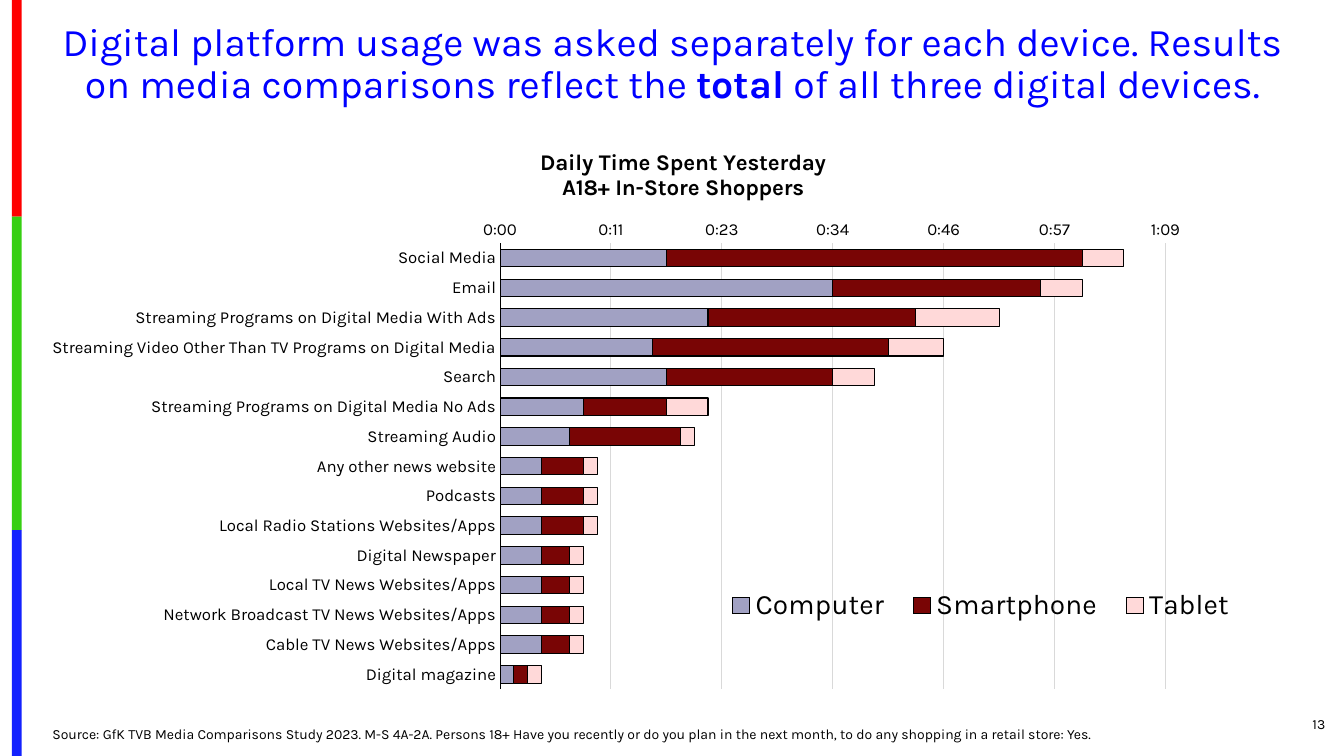
"""Build the slide on daily time spent per digital device."""
from dataclasses import dataclass
from typing import Any

from lxml.etree import SubElement
from pptx import Presentation
from pptx.chart.data import CategoryChartData
from pptx.dml.color import RGBColor
from pptx.enum.chart import XL_CHART_TYPE as ChartType
from pptx.enum.chart import XL_LEGEND_POSITION as LegendPos
from pptx.enum.chart import XL_TICK_MARK as Tick
from pptx.enum.shapes import MSO_SHAPE as Shape
from pptx.enum.text import MSO_ANCHOR as Anchor
from pptx.enum.text import PP_ALIGN as Align
from pptx.oxml.ns import qn
from pptx.util import Cm, Pt

FONT = "Karla"
BLACK = RGBColor(0x00, 0x00, 0x00)
TITLE_BLUE = RGBColor(0x00, 0x00, 0xFF)
RED = RGBColor(0xFE, 0x00, 0x00)
GREEN = RGBColor(0x36, 0xCF, 0x12)
BLUE = RGBColor(0x13, 0x22, 0xFE)
GRID_GREY = RGBColor(0xD9, 0xD9, 0xD9)
LAVENDER = RGBColor(0xA1, 0xA1, 0xC3)
MAROON = RGBColor(0x79, 0x05, 0x05)
PINK = RGBColor(0xFF, 0xD9, 0xD9)
DAY_PARTS = 1000


@dataclass
class Stripe:
    height: float
    color: RGBColor


@dataclass
class Device:
    name: str
    color: RGBColor
    usage: list[int]


@dataclass
class Label:
    box: tuple[float, float, float, float]
    runs: list[tuple[str, bool]]
    size: int
    color: RGBColor
    align: Align
    anchor: Anchor
    spacing: float = 1.0


STRIPES = [Stripe(5.46, RED), Stripe(7.9, GREEN), Stripe(5.69, BLUE)]

PLATFORMS = [
    "Social Media",
    "Email",
    "Streaming Programs on Digital Media With Ads",
    "Streaming Video Other Than TV Programs on Digital Media",
    "Search",
    "Streaming Programs on Digital Media No Ads",
    "Streaming Audio",
    "Any other news website",
    "Podcasts",
    "Local Radio Stations Websites/Apps",
    "Digital Newspaper",
    "Local TV News Websites/Apps",
    "Network Broadcast TV News Websites/Apps",
    "Cable TV News Websites/Apps",
    "Digital magazine",
]

DEVICES = [
    Device("Computer", LAVENDER, [12, 24, 15, 11, 12, 6, 5, 3, 3, 3, 3, 3, 3, 3, 1]),
    Device("Smartphone", MAROON, [30, 15, 15, 17, 12, 6, 8, 3, 3, 3, 2, 2, 2, 2, 1]),
    Device("Tablet", PINK, [3, 3, 6, 4, 3, 3, 1, 1, 1, 1, 1, 1, 1, 1, 1]),
]

LABELS = [
    Label((1.17, 0.43, 31.55, 2.41), [
        ("Digital platform usage was asked separately for each device. "
         "Results on media comparisons reflect the ", False),
        ("total", True),
        (" of all three digital devices.", False),
    ], 28, TITLE_BLUE, Align.CENTER, Anchor.MIDDLE, 0.9),
    Label((30.91, 17.73, 2.74, 1.02), [("13", False)],
          10, BLACK, Align.RIGHT, Anchor.MIDDLE),
    Label((1.07, 17.71, 27.1, 1.12), [
        ("Source: GfK TVB Media Comparisons Study 2023. M-S 4A-2A. Persons 18+ "
         "Have you recently or do you plan in the next month, to do any shopping "
         "in a retail store: Yes.", False),
    ], 10, BLACK, Align.LEFT, Anchor.BOTTOM),
]


def set_font(font: Any, size: int, color: RGBColor = BLACK, bold: bool = False) -> None:
    """Apply the slide's font with a size, colour and weight."""
    for name, value in {"name": FONT, "size": Pt(size), "bold": bold}.items():
        setattr(font, name, value)
    font.color.rgb = color


def set_line(line: Any, color: RGBColor) -> None:
    """Give a line its colour and the common width."""
    line.color.rgb = color
    line.width = Pt(0.75)


def set_layout(parent: Any, index: int, **places: float) -> None:
    """Place a chart part by fractions of the chart area."""
    for old in parent.findall(qn("c:layout")):
        parent.remove(old)
    layout = SubElement(parent, qn("c:layout"))
    parent.insert(index, layout)
    manual = SubElement(layout, qn("c:manualLayout"))
    modes = {"xMode": "edge", "yMode": "edge"}
    if index == 0:
        modes = {"layoutTarget": "inner", **modes}
    for tag, value in {**modes, **places}.items():
        SubElement(manual, qn(f"c:{tag}")).set("val", str(value))


def add_stripes(s: Any) -> None:
    """Stack the coloured stripes down the left edge."""
    top = 0.0
    for stripe in STRIPES:
        sp = s.shapes.add_shape(Shape.RECTANGLE, Cm(0.3), Cm(top), Cm(0.25), Cm(stripe.height))
        sp.shadow.inherit = False
        sp.fill.solid()
        sp.fill.fore_color.rgb = stripe.color
        sp.line.fill.background()
        top += stripe.height


def add_label(s: Any, label: Label) -> None:
    """Add a wrapped text box made of plain and bold runs."""
    tf = s.shapes.add_textbox(*map(Cm, label.box)).text_frame
    tf.word_wrap = True
    tf.vertical_anchor = label.anchor
    p = tf.paragraphs[0]
    p.alignment = label.align
    p.line_spacing = label.spacing
    for text, bold in label.runs:
        r = p.add_run()
        r.text = text
        set_font(r.font, label.size, label.color, bold)


def style_axes(chart: Any) -> None:
    """Format the platform axis and the time axis."""
    for axis in (chart.category_axis, chart.value_axis):
        axis.major_tick_mark = axis.minor_tick_mark = Tick.NONE
        set_font(axis.tick_labels.font, 12)
    chart.category_axis.reverse_order = True
    set_line(chart.category_axis.format.line, BLACK)
    axis = chart.value_axis
    for name, value in {"minimum_scale": 0, "maximum_scale": 0.055, "major_unit": 0.008}.items():
        setattr(axis, name, value)
    axis.format.line.fill.background()
    set_line(axis.major_gridlines.format.line, GRID_GREY)
    axis.tick_labels.number_format = "h:mm;@"
    axis.tick_labels.number_format_is_linked = False


def add_usage_chart(s: Any) -> None:
    """Add the stacked bars of time per platform and device."""
    data = CategoryChartData(number_format="h:mm")
    data.categories = PLATFORMS
    for device in DEVICES:
        data.add_series(device.name, [part / DAY_PARTS for part in device.usage])
    box = map(Cm, (-2.11, 3.58, 34.62, 15.27))
    chart = s.shapes.add_chart(ChartType.BAR_STACKED, *box, data).chart
    set_font(chart.font, 10)

    tf = chart.chart_title.text_frame
    tf.text = "Daily Time Spent Yesterday\nA18+ In-Store Shoppers"
    for p in tf.paragraphs:
        set_font(p.runs[0].font, 16, bold=True)
    chart.chart_title.include_in_layout = False
    set_layout(chart.chart_title._element, 1, x=0.452, y=0.005)

    chart.has_legend = True
    legend = chart.legend
    legend.position = LegendPos.BOTTOM
    legend.include_in_layout = False
    set_font(legend.font, 20)
    set_layout(legend._element, 1, x=0.58, y=0.73, w=0.39, h=0.07)

    plot = chart.plots[0]
    for name, value in {"gap_width": 70, "overlap": 100, "vary_by_categories": False}.items():
        setattr(plot, name, value)
    for series, device in zip(plot.series, DEVICES):
        series.format.fill.solid()
        series.format.fill.fore_color.rgb = device.color
        set_line(series.format.line, BLACK)
    style_axes(chart)
    set_layout(chart._chartSpace.chart.plotArea, 0, x=0.425, y=0.167, w=0.555, h=0.736)


def main() -> None:
    """Assemble and save the slide."""
    prs = Presentation()
    prs.slide_width, prs.slide_height = Cm(33.87), Cm(19.05)
    s = prs.slides.add_slide(prs.slide_layouts[6])
    add_stripes(s)
    add_usage_chart(s)
    for label in LABELS:
        add_label(s, label)
    prs.save("out.pptx")


if __name__ == "__main__":
    main()
